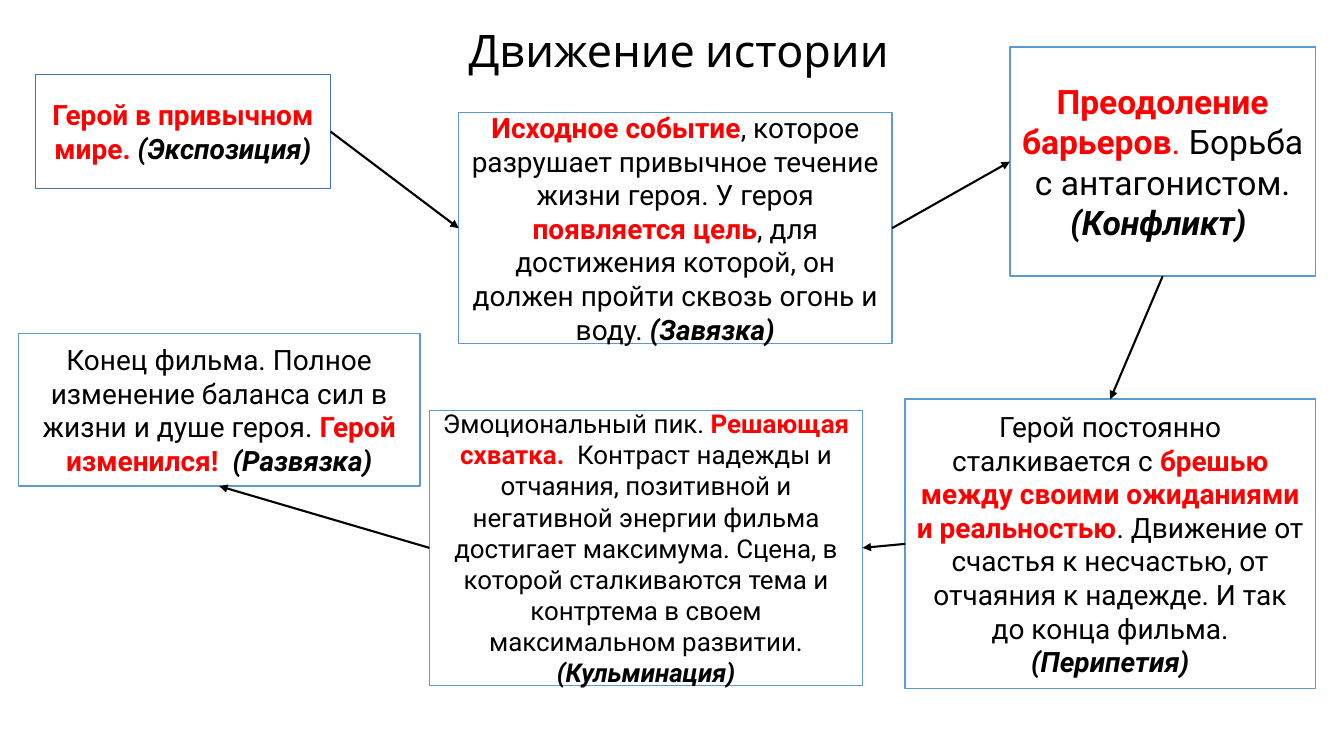
from lxml import etree
from pptx import Presentation
from pptx.dml.color import RGBColor
from pptx.enum.shapes import MSO_CONNECTOR, MSO_SHAPE
from pptx.enum.text import MSO_ANCHOR, MSO_AUTO_SIZE, PP_ALIGN
from pptx.oxml.ns import qn
from pptx.util import Cm, Pt

BLACK = RGBColor(0, 0, 0)
WHITE = RGBColor(255, 255, 255)
RED = RGBColor(255, 0, 0)
BLUE = RGBColor(0x44, 0x72, 0xC4)
LIGHT_BLUE = RGBColor(0x5B, 0x9B, 0xD5)

# Run styles: colour, bold, italic
PLAIN = (BLACK, False, False)
KEY = (RED, True, False)
RED_PLAIN = (RED, False, False)
STAGE = (BLACK, True, True)

TOP, LEFT, BOTTOM, RIGHT = range(4)

# Story stages: box in cm, text size, outline, runs
STAGES = {
    "exposition": ((0.89, 1.88, 7.44, 2.87), 20, BLUE, [
        ("Герой в привычном мире. ", KEY),
        ("(Экспозиция)", STAGE)]),
    "inciting": ((11.56, 2.84, 10.92, 5.82), 20, LIGHT_BLUE, [
        ("Исходное событие", KEY),
        (", которое разрушает привычное течение жизни героя. У героя ", PLAIN),
        ("появляется цель", KEY),
        (", для достижения которой, он должен пройти сквозь огонь и воду. ", PLAIN),
        ("(Завязка)", STAGE)]),
    "conflict": ((25.45, 1.19, 7.7, 5.77), 24, LIGHT_BLUE, [
        ("Преодоление барьеров", KEY),
        (".", RED_PLAIN),
        (" Борьба с антагонистом. ", PLAIN),
        ("(Конфликт) ", STAGE)]),
    "peripeteia": ((22.81, 10.06, 10.34, 7.29), 20, LIGHT_BLUE, [
        ("Герой постоянно сталкивается с ", PLAIN),
        ("брешью между своими ожиданиями и реальностью", KEY),
        (". Движение от счастья к несчастью, от отчаяния к надежде. "
         "И так до конца фильма. ", PLAIN),
        ("(Перипетия)", STAGE)]),
    "climax": ((10.82, 10.34, 10.92, 6.93), 18.5, LIGHT_BLUE, [
        ("Эмоциональный пик. ", PLAIN),
        ("Решающая схватка.  ", KEY),
        ("Контраст надежды и отчаяния, позитивной и негативной энергии фильма "
         "достигает максимума. Сцена, в которой сталкиваются тема и контртема "
         "в своем максимальном развитии. ", PLAIN),
        ("(Кульминация)", STAGE)]),
    "resolution": ((0.46, 8.41, 10.13, 3.84), 20, LIGHT_BLUE, [
        ("Конец фильма. Полное изменение баланса сил в жизни и душе героя. ", PLAIN),
        ("Герой изменился!  ", KEY),
        ("(Развязка)", STAGE)]),
}

# Arrows: from stage and side, to stage and side
ARROWS = [
    ("exposition", RIGHT, "inciting", LEFT),
    ("inciting", RIGHT, "conflict", LEFT),
    ("conflict", BOTTOM, "peripeteia", TOP),
    ("peripeteia", LEFT, "climax", RIGHT),
    ("climax", LEFT, "resolution", BOTTOM),
]


def add_title(s, box, text):
    tf = s.shapes.add_textbox(*map(Cm, box)).text_frame
    tf.word_wrap = False
    tf.auto_size = MSO_AUTO_SIZE.SHAPE_TO_FIT_TEXT
    p = tf.paragraphs[0]
    p.text = text
    p.font.name, p.font.size = "Cabin", Pt(32)
    p.font.color.rgb = BLACK


def add_stage(s, box, size, outline, runs):
    sp = s.shapes.add_shape(MSO_SHAPE.RECTANGLE, *map(Cm, box))
    sp.shadow.inherit = False
    sp.fill.solid()
    sp.fill.fore_color.rgb = WHITE
    sp.line.color.rgb = outline
    sp.line.width = Pt(1)
    tf = sp.text_frame
    tf.word_wrap = True
    tf.vertical_anchor = MSO_ANCHOR.MIDDLE
    p = tf.paragraphs[0]
    p.alignment = PP_ALIGN.CENTER
    p.font.name, p.font.size = "Roboto", Pt(size)
    for text, (color, bold, italic) in runs:
        r = p.add_run()
        r.text = text
        r.font.color.rgb = color
        r.font.bold, r.font.italic = bold, italic
    return sp


def add_arrow(s, start, start_side, end, end_side):
    cxn = s.shapes.add_connector(MSO_CONNECTOR.STRAIGHT, 0, 0, 0, 0)
    cxn.begin_connect(start, start_side)
    cxn.end_connect(end, end_side)
    cxn.line.color.rgb = BLACK
    cxn.line.width = Pt(1.5)
    # Arrowhead, and no shadow
    ln = cxn.line._get_or_add_ln()
    etree.SubElement(ln, qn("a:tailEnd"), type="triangle")
    etree.SubElement(cxn._element.spPr, qn("a:effectLst"))


def main():
    prs = Presentation()
    prs.slide_width, prs.slide_height = Cm(33.87), Cm(19.05)
    s = prs.slides.add_slide(prs.slide_layouts[6])
    add_title(s, (11.56, 0.46, 11.46, 1.63), "Движение истории")
    boxes = {name: add_stage(s, *stage) for name, stage in STAGES.items()}
    for start, start_side, end, end_side in ARROWS:
        add_arrow(s, boxes[start], start_side, boxes[end], end_side)
    prs.save("out.pptx")


if __name__ == "__main__":
    main()
